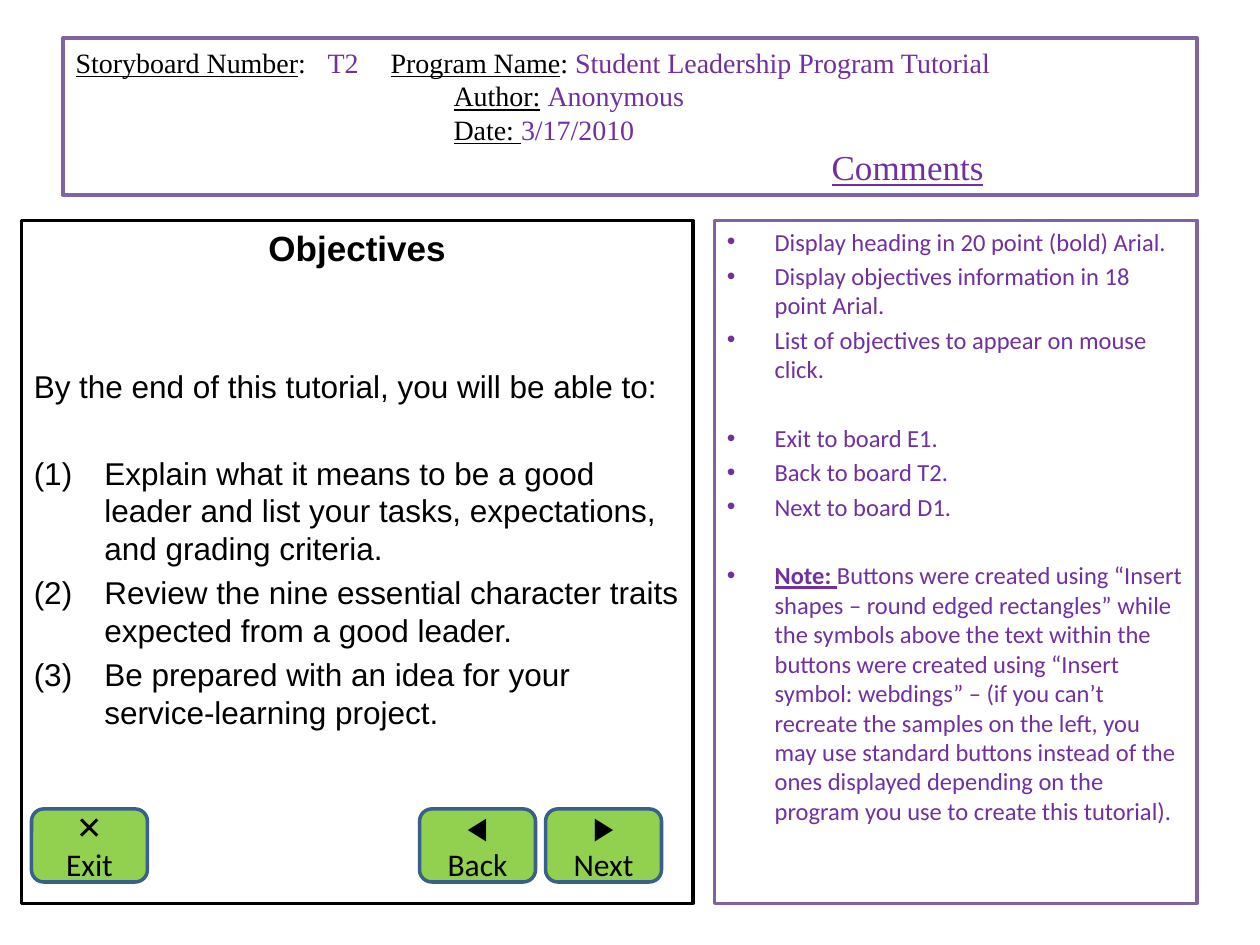
from dataclasses import dataclass

from lxml import etree
from pptx import Presentation
from pptx.dml.color import RGBColor
from pptx.enum.shapes import MSO_SHAPE as Shape
from pptx.enum.text import MSO_ANCHOR as Anchor, MSO_AUTO_SIZE as AutoSize, PP_ALIGN as Align
from pptx.oxml.ns import qn
from pptx.util import Inches, Pt


@dataclass(frozen=True)
class Theme:
    black: str = "000000"
    white: str = "FFFFFF"
    purple: str = "7030A0"
    frame: str = "8064A2"
    button: str = "92D050"
    button_line: str = "3A5F8C"
    serif: str = "Times New Roman"
    sans: str = "Arial"
    label: str = "Calibri"
    heading: int = 20
    body: int = 18
    header: int = 16
    comment: int = 14
    line: float = 2


THEME = Theme()


def style_box(shape, box, line, fill=THEME.white, anchor=Anchor.TOP):
    """Place a shape and set its fill, outline and text frame."""
    shape.left, shape.top, shape.width, shape.height = (Inches(value) for value in box)
    shape.fill.solid()
    shape.fill.fore_color.rgb = RGBColor.from_string(fill)
    shape.line.color.rgb = RGBColor.from_string(line)
    shape.line.width = Pt(THEME.line)
    shape.shadow.inherit = False
    frame = shape.text_frame
    frame.word_wrap = True
    frame.auto_size = AutoSize.NONE
    frame.vertical_anchor = anchor
    return frame


def add_box(slide, box, line, kind=Shape.RECTANGLE, **style):
    shape = slide.shapes.add_shape(kind, *(Inches(value) for value in box))
    return style_box(shape, box, line, **style)


def write(frame, *runs, font, size, color=THEME.black, align=Align.LEFT,
          before=0, margin=0, hanging=0, bullet=None, tab=None):
    """Add a paragraph; a run is a string or a (string, format dict) pair."""
    first = frame.paragraphs[0]
    paragraph = frame.add_paragraph() if first.runs else first
    paragraph.alignment = align
    paragraph.space_before = Pt(before)
    properties = paragraph._p.get_or_add_pPr()
    properties.set("marL", str(Inches(margin)))
    properties.set("indent", str(-Inches(hanging)))
    if bullet == "number":
        etree.SubElement(properties, qn("a:buFont"), typeface="+mj-lt")
        etree.SubElement(properties, qn("a:buAutoNum"), type="arabicParenBoth")
    elif bullet:
        etree.SubElement(properties, qn("a:buFont"), typeface=THEME.sans)
        etree.SubElement(properties, qn("a:buChar"), char=bullet)
    else:
        etree.SubElement(properties, qn("a:buNone"))
    if tab:
        stops = etree.SubElement(properties, qn("a:tabLst"))
        for position in (2 * tab, 3 * tab):
            etree.SubElement(stops, qn("a:tab"), pos=str(Inches(position)), algn="l")
    for item in runs:
        text, extra = (item, {}) if isinstance(item, str) else item
        run = paragraph.add_run()
        run.text = text
        run.font.name = font
        run.font.size = Pt(size)
        run.font.bold = extra.get("bold", False)
        run.font.underline = extra.get("underline", False)
        run.font.color.rgb = RGBColor.from_string(extra.get("color", color))


def build_header(slide, box):
    frame = style_box(slide.shapes.title, box, THEME.frame, anchor=Anchor.MIDDLE)
    style = dict(font=THEME.serif, size=THEME.header)
    label, value = {"underline": True}, {"color": THEME.purple}
    write(frame, ("Storyboard Number", label), ":\t", ("T2\t", value),
          ("Program Name", label), ": ",
          ("Student Leadership Program Tutorial", value), tab=1, **style)
    write(frame, ("Author:", label), " ", ("Anonymous", value), margin=3, **style)
    write(frame, ("Date: ", label), ("3/17/2010", value), margin=3, **style)
    write(frame, ("Comments", label), margin=6, font=THEME.serif,
          size=THEME.heading, color=THEME.purple)


def build_objectives(slide, box):
    frame = add_box(slide, box, THEME.black)
    style = dict(font=THEME.sans, size=THEME.body)
    write(frame, ("Objectives", {"bold": True}), font=THEME.sans,
          size=THEME.heading, align=Align.CENTER, before=4)
    write(frame, "By the end of this tutorial, you will be able to:", before=56, **style)
    objectives = (
        "Explain what it means to be a good leader and list your tasks, "
        "expectations, and grading criteria.",
        "Review the nine essential character traits expected from a good leader.",
        "Be prepared with an idea for your service-learning project.",
    )
    for index, objective in enumerate(objectives):
        write(frame, objective, before=3.6 if index else 28, margin=0.56,
              hanging=0.56, bullet="number", **style)

    # Navigation buttons, relative to the panel
    left, top = box[:2]
    for offset, symbol, caption in ((0.08, "✕", "Exit"), (3.16, "◀", "Back"),
                                    (4.16, "▶", "Next")):
        build_button(slide, (left + offset, top + 4.67, 0.92, 0.58), symbol, caption)


def build_button(slide, box, symbol, caption):
    frame = add_box(slide, box, THEME.button_line, kind=Shape.ROUNDED_RECTANGLE,
                    fill=THEME.button, anchor=Anchor.MIDDLE)
    for text in (symbol, caption):
        write(frame, text, font=THEME.label, size=THEME.body, align=Align.CENTER)


def build_comments(slide, box):
    frame = add_box(slide, box, THEME.frame)
    groups = (
        (["Display heading in 20 point (bold) Arial."],
         ["Display objectives information in 18 point Arial."],
         ["List of objectives to appear on mouse click."]),
        (["Exit to board E1."], ["Back to board T2."], ["Next to board D1."]),
        ([("Note: ", {"bold": True, "underline": True}),
          "Buttons were created using “Insert shapes – round edged rectangles” "
          "while the symbols above the text within the buttons were created using "
          "“Insert symbol: webdings” – (if you can’t recreate the samples on the "
          "left, you may use standard buttons instead of the ones displayed "
          "depending on the program you use to create this tutorial)."],),
    )
    for group_index, group in enumerate(groups):
        for index, runs in enumerate(group):
            starts_group = group_index and not index
            write(frame, *runs, font=THEME.label, size=THEME.comment,
                  color=THEME.purple, before=22.5 if starts_group else 2.8,
                  margin=0.38, hanging=0.38, bullet="•")


def main():
    presentation = Presentation()
    presentation.slide_width, presentation.slide_height = Inches(10), Inches(7.5)
    slide = presentation.slides.add_slide(presentation.slide_layouts[5])
    build_header(slide, (0.5, 0.3, 9, 1.25))
    build_objectives(slide, (0.17, 1.75, 5.33, 5.42))
    build_comments(slide, (5.67, 1.75, 3.83, 5.42))
    presentation.save("out.pptx")


if __name__ == "__main__":
    main()
